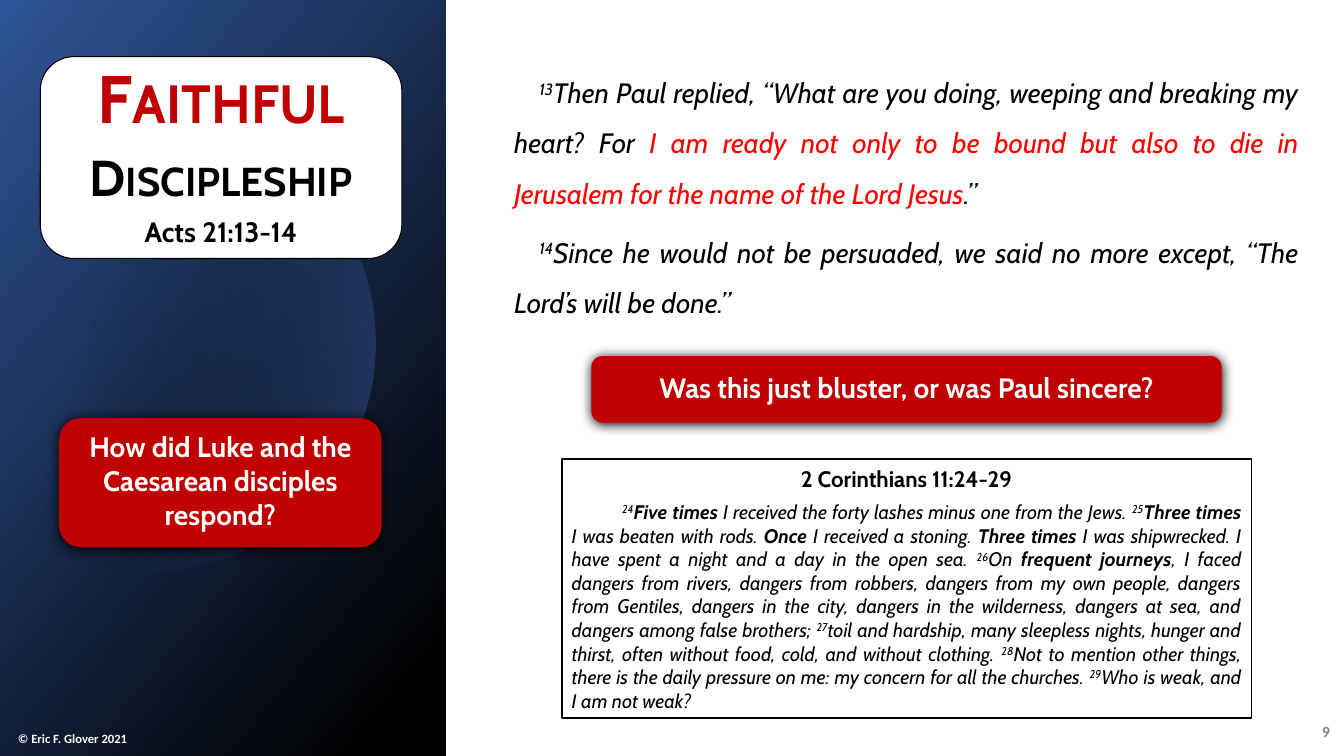
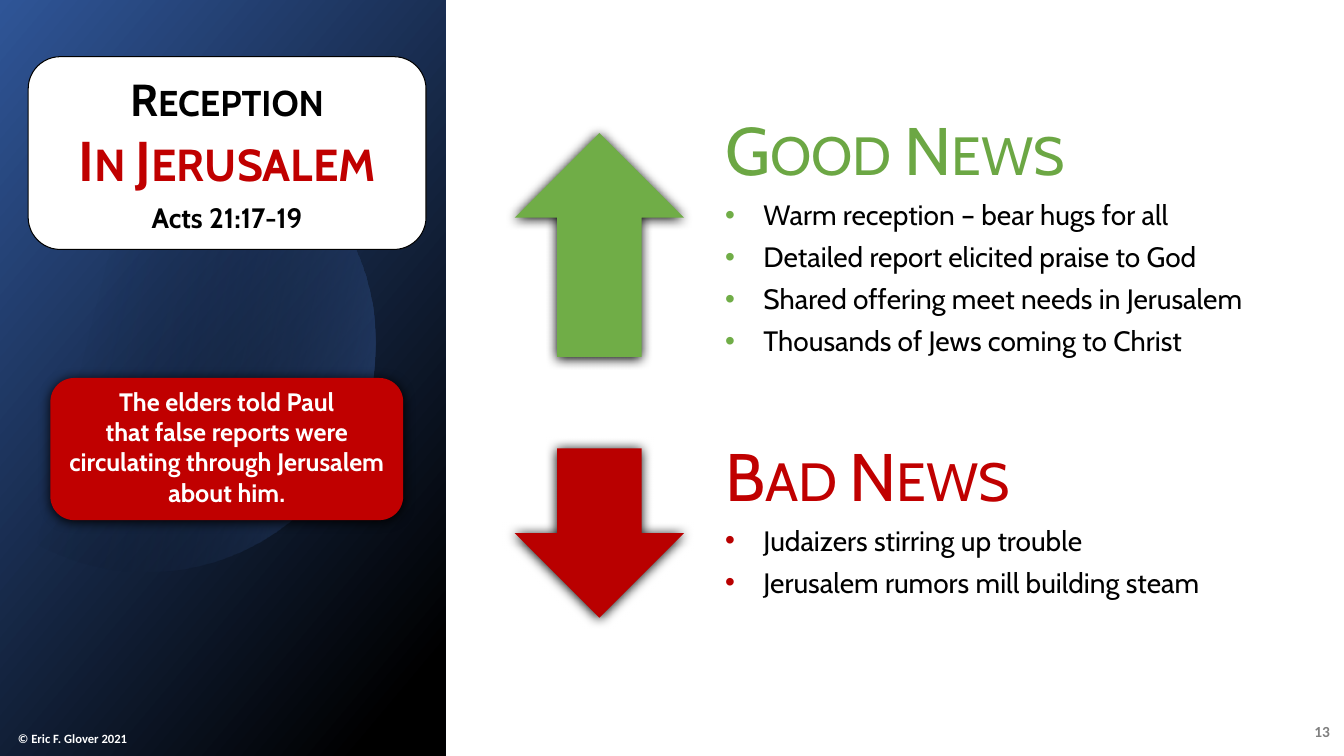
"""Build two slides on Paul's journey to Jerusalem."""
import math

from lxml import etree
from pptx import Presentation
from pptx import util as u
from pptx.dml.color import RGBColor
from pptx.enum import shapes, text
from pptx.oxml.ns import qn

WIDTH, HEIGHT = u.Inches(13.33), u.Inches(7.5)
BLACK = RGBColor(0x00, 0x00, 0x00)
WHITE = RGBColor(0xFF, 0xFF, 0xFF)
GRAY = RGBColor(0x80, 0x80, 0x80)
NAVY = RGBColor(0x2F, 0x55, 0x97)
BLUE = RGBColor(0x44, 0x72, 0xC4)
CRIMSON = RGBColor(0xC0, 0x00, 0x00)
DARK_RED = RGBColor(0xB9, 0x00, 0x00)
RED = RGBColor(0xFF, 0x00, 0x00)
GREEN = RGBColor(0x70, 0xAD, 0x47)
DARK_GREEN = RGBColor(0x6C, 0xA7, 0x44)

CENTER, RIGHT, JUSTIFY = text.PP_ALIGN.CENTER, text.PP_ALIGN.RIGHT, text.PP_ALIGN.JUSTIFY
MIDDLE, BOTTOM, TOP = text.MSO_ANCHOR.MIDDLE, text.MSO_ANCHOR.BOTTOM, text.MSO_ANCHOR.TOP
KIND = shapes.MSO_SHAPE

PLAIN, VERSE, STRONG, VOW = {}, {"raised": True}, {"bold": True}, {"color": RED}

ACTS = [
    [("13", VERSE),
     ("Then Paul replied, “What are you doing, weeping and breaking my heart? For ", PLAIN),
     ("I am ready not only to be bound but also to die in Jerusalem "
      "for the name of the Lord Jesus", VOW),
     (".”", PLAIN)],
    [("14", VERSE),
     ("Since he would not be persuaded, we said no more except, "
      "“The Lord’s will be done.”", PLAIN)],
]
CORINTHIANS = [
    ("24", VERSE), ("Five times", STRONG),
    (" I received the forty lashes minus one from the Jews. ", PLAIN),
    ("25", VERSE), ("Three times", STRONG), (" I was beaten with rods. ", PLAIN),
    ("Once", STRONG), (" I received a stoning. ", PLAIN), ("Three times", STRONG),
    (" I was shipwrecked. I have spent a night and a day in the open sea. ", PLAIN),
    ("26", VERSE), ("On ", PLAIN), ("frequent journeys", STRONG),
    (", I faced dangers from rivers, dangers from robbers, dangers from my own people, "
     "dangers from Gentiles, dangers in the city, dangers in the wilderness, "
     "dangers at sea, and dangers among false brothers; ", PLAIN),
    ("27", VERSE),
    ("toil and hardship, many sleepless nights, hunger and thirst, often without food, "
     "cold, and without clothing. ", PLAIN),
    ("28", VERSE),
    ("Not to mention other things, there is the daily pressure on me: "
     "my concern for all the churches. ", PLAIN),
    ("29", VERSE), ("Who is weak, and I am not weak?", PLAIN),
]
NEWS = [
    ("Good News", DARK_GREEN, GREEN, 0,
     ["Warm reception – bear hugs for all", "Detailed report elicited praise to God",
      "Shared offering meet needs in Jerusalem", "Thousands of Jews coming to Christ"]),
    ("Bad News", CRIMSON, DARK_RED, 49,
     ["Judaizers stirring up trouble", "Jerusalem rumors mill building steam"]),
]


def area(left, top, width, height):
    """Turn percentages of the slide's size into lengths."""
    return [u.Emu(round(share * side / 100)) for share, side in
            zip((left, top, width, height), (WIDTH, HEIGHT, WIDTH, HEIGHT))]


def add_run(paragraph, words, size, color=BLACK, bold=False, italic=False,
            small_caps=False, raised=False, font="Cabin"):
    """Add one formatted run to a paragraph."""
    run = paragraph.add_run()
    run.text = words
    run.font.name, run.font.size = font, u.Pt(size)
    run.font.bold, run.font.italic = bold, italic
    run.font.color.rgb = color
    properties = run.font._element
    if small_caps:
        properties.set("cap", "small")
    if raised:
        properties.set("baseline", "30000")


def next_paragraph(frame, align=None, before=0, after=6, spacing=1.0):
    """Return the frame's first paragraph if still empty, or else a new one."""
    last = frame.paragraphs[-1]
    paragraph = frame.add_paragraph() if last.runs else last
    paragraph.alignment, paragraph.line_spacing = align, spacing
    paragraph.space_before, paragraph.space_after = u.Pt(before), u.Pt(after)
    return paragraph


def set_indent(paragraph, margin=0, first=0, bullet_color=None):
    """Set the indents in inches and a coloured bullet or none."""
    properties = paragraph._p.get_or_add_pPr()
    properties.set("marL", str(u.Inches(margin)))
    properties.set("indent", str(u.Inches(first)))
    if bullet_color is None:
        etree.SubElement(properties, qn("a:buNone"))
        return
    holder = etree.SubElement(properties, qn("a:buClr"))
    etree.SubElement(holder, qn("a:srgbClr"), val=str(bullet_color))
    etree.SubElement(properties, qn("a:buFont"), typeface="Arial")
    etree.SubElement(properties, qn("a:buChar"), char="•")


def set_frame(shape, anchor, insets=(0.1, 0.05, 0.1, 0.05)):
    """Set wrapping, anchor and insets, and return the text frame."""
    frame = shape.text_frame
    frame.word_wrap, frame.auto_size = True, text.MSO_AUTO_SIZE.NONE
    frame.vertical_anchor = anchor
    (frame.margin_left, frame.margin_top,
     frame.margin_right, frame.margin_bottom) = map(u.Inches, insets)
    return frame


def add_block(slide, kind, place, fill, outline=None, shadow=False):
    """Add a filled preset shape with an optional outline and soft shadow."""
    shape = slide.shapes.add_shape(kind, *area(*place))
    shape.fill.solid()
    shape.fill.fore_color.rgb = fill
    if outline:
        shape.line.color.rgb, shape.line.width = BLACK, u.Pt(outline)
    else:
        shape.line.fill.background()
    shape.shadow.inherit = False
    if shadow:
        effects = shape.element.spPr.find(qn("a:effectLst"))
        outer = etree.SubElement(effects, qn("a:outerShdw"), blurRad=str(u.Pt(8.5)),
                                 dist=str(u.Pt(1)), dir="5400000", rotWithShape="0")
        etree.SubElement(outer, qn("a:srgbClr"), val=str(BLACK))
    return shape


def add_callout(slide, place, lines, size=20):
    """Add a red rounded callout with centred bold text."""
    shape = add_block(slide, KIND.ROUNDED_RECTANGLE, place, CRIMSON, shadow=True)
    frame = set_frame(shape, MIDDLE, (0.1, 0, 0.1, 0.05))
    paragraph = next_paragraph(frame, CENTER, after=0)
    for index, line in enumerate(lines):
        if index:
            paragraph.add_line_break()
        add_run(paragraph, line, size, WHITE, bold=True)


def add_note(slide, place, words, size, color, anchor, align=None):
    """Add a small bold footer text."""
    frame = set_frame(slide.shapes.add_textbox(*area(*place)), anchor)
    add_run(next_paragraph(frame, align, after=0), words, size, color, bold=True, font="Calibri")


def set_gradient(shape, angle, stops):
    """Fill a shape with a two-stop gradient of (position, colour, opacity)."""
    shape.fill.gradient()
    shape.fill.gradient_angle = angle
    for stop, (position, color, opacity) in zip(shape.fill.gradient_stops, stops):
        stop.position, stop.color.rgb = position, color
    for element, (_, _, opacity) in zip(shape.element.spPr.iter(qn("a:srgbClr")), stops):
        etree.SubElement(element, qn("a:alpha"), val=str(opacity * 1000))
    shape.line.fill.background()
    shape.shadow.inherit = False


def add_disc(slide, center_x=1.45, center_y=3.4, radius=2.27):
    """Add the translucent disc, cut off at the slide's left edge."""
    limit = math.acos(-center_x / radius)
    steps = 120
    turns = [limit * (2 * step / steps - 1) for step in range(steps + 1)]
    points = [(u.Inches(center_x + radius * math.cos(turn)),
               u.Inches(center_y + radius * math.sin(turn))) for turn in turns]
    builder = slide.shapes.build_freeform(*points[0])
    builder.add_line_segments(points[1:], close=True)
    set_gradient(builder.convert_to_shape(), 346, [(0.29, BLACK, 0), (1, BLUE, 43)])


def add_page(presentation, number, card, title_lines, card_bottom=0):
    """Add a slide with the side panel, footers and title card, and return it with its body."""
    slide = presentation.slides.add_slide(presentation.slide_layouts[1])
    panel = slide.shapes.add_shape(KIND.RECTANGLE, *area(0, 0, 33.15, 100))
    set_gradient(panel, 320, [(0, NAVY, 100), (0.92, BLACK, 100)])
    add_disc(slide)
    add_note(slide, (0.6, 95.6, 11.8, 3.7), "© Eric F. Glover 2021", 9, WHITE, BOTTOM)
    add_note(slide, (96, 94.1, 3.7, 5.3), number, 11, GRAY, MIDDLE, RIGHT)
    add_block(slide, KIND.ROUNDED_RECTANGLE, card, WHITE, outline=0.75)
    title, body = slide.placeholders
    for placeholder in (title, body):
        slide.shapes.element.append(placeholder.element)
    move(title, card)
    frame = set_frame(title, MIDDLE, (0, 0, 0, card_bottom))
    for parts in title_lines:
        paragraph = next_paragraph(frame, CENTER)
        for index, (words, size, color, small_caps) in enumerate(parts):
            if index:
                paragraph.add_line_break()
            add_run(paragraph, words, size, color, bold=True, small_caps=small_caps)
    return slide, body


def move(shape, place):
    """Move and resize a shape."""
    shape.left, shape.top, shape.width, shape.height = area(*place)


def add_passage(frame, verses, size, first, after, spacing=1.0):
    """Add one justified paragraph of italic scripture."""
    paragraph = next_paragraph(frame, JUSTIFY, after=after, spacing=spacing)
    set_indent(paragraph, first=first)
    for words, style in verses:
        add_run(paragraph, words, size, italic=True, **style)


def build_discipleship(presentation):
    """Build the slide on faithful discipleship."""
    slide, body = add_page(presentation, "9", (3, 7.5, 26.9, 26.7), [
        [("Faithful", 48, CRIMSON, True)],
        [("Discipleship", 36, BLACK, True)],
        [("Acts 21:13-14", 20, BLACK, False)]], card_bottom=0.1)
    move(body, (37.5, 7.1, 59.9, 35.3))
    frame = set_frame(body, TOP)
    for verses in ACTS:
        add_passage(frame, verses, 20, first=0.25, after=6, spacing=1.5)
    add_callout(slide, (44, 47.1, 46.9, 8.8), ["Was this just bluster, or was Paul sincere?"])
    box = add_block(slide, KIND.RECTANGLE, (41.8, 60.7, 51.3, 34.3), WHITE, outline=1)
    frame = set_frame(box, MIDDLE)
    add_run(next_paragraph(frame, CENTER), "2 Corinthians 11:24-29", 16, bold=True)
    add_passage(frame, CORINTHIANS, 14, first=0.5, after=0)
    add_callout(slide, (4.4, 55.3, 24, 17.1),
                ["How did Luke and the Caesarean disciples respond?"])


def build_reception(presentation):
    """Build the slide on the reception in Jerusalem."""
    slide, body = add_page(presentation, "13", (2.1, 7.5, 29.6, 25.5), [
        [("Reception", 32, BLACK, True), ("In Jerusalem", 40, CRIMSON, True)],
        [("Acts 21:17-19", 20, BLACK, False)]])
    move(body, (53.2, 13.7, 43.2, 66.7))
    frame = set_frame(body, TOP)
    for heading, color, bullet_color, before, items in NEWS:
        paragraph = next_paragraph(frame, before=before)
        set_indent(paragraph)
        add_run(paragraph, heading, 48, color, small_caps=True)
        for item in items:
            paragraph = next_paragraph(frame)
            set_indent(paragraph, 0.38, -0.38, bullet_color)
            add_run(paragraph, item, 20)
    add_callout(slide, (3.75, 50, 26.25, 18.8), [
        "The elders told Paul",
        "that false reports were circulating through Jerusalem about him."], size=18)
    add_block(slide, KIND.UP_ARROW, (38.3, 17.6, 12.6, 29.6), GREEN, shadow=True)
    add_block(slide, KIND.DOWN_ARROW, (38.3, 59.3, 12.6, 22.4), DARK_RED, shadow=True)


def main():
    """Build and save the presentation."""
    presentation = Presentation()
    presentation.slide_width, presentation.slide_height = WIDTH, HEIGHT
    build_discipleship(presentation)
    build_reception(presentation)
    presentation.save("out.pptx")


if __name__ == "__main__":
    main()
